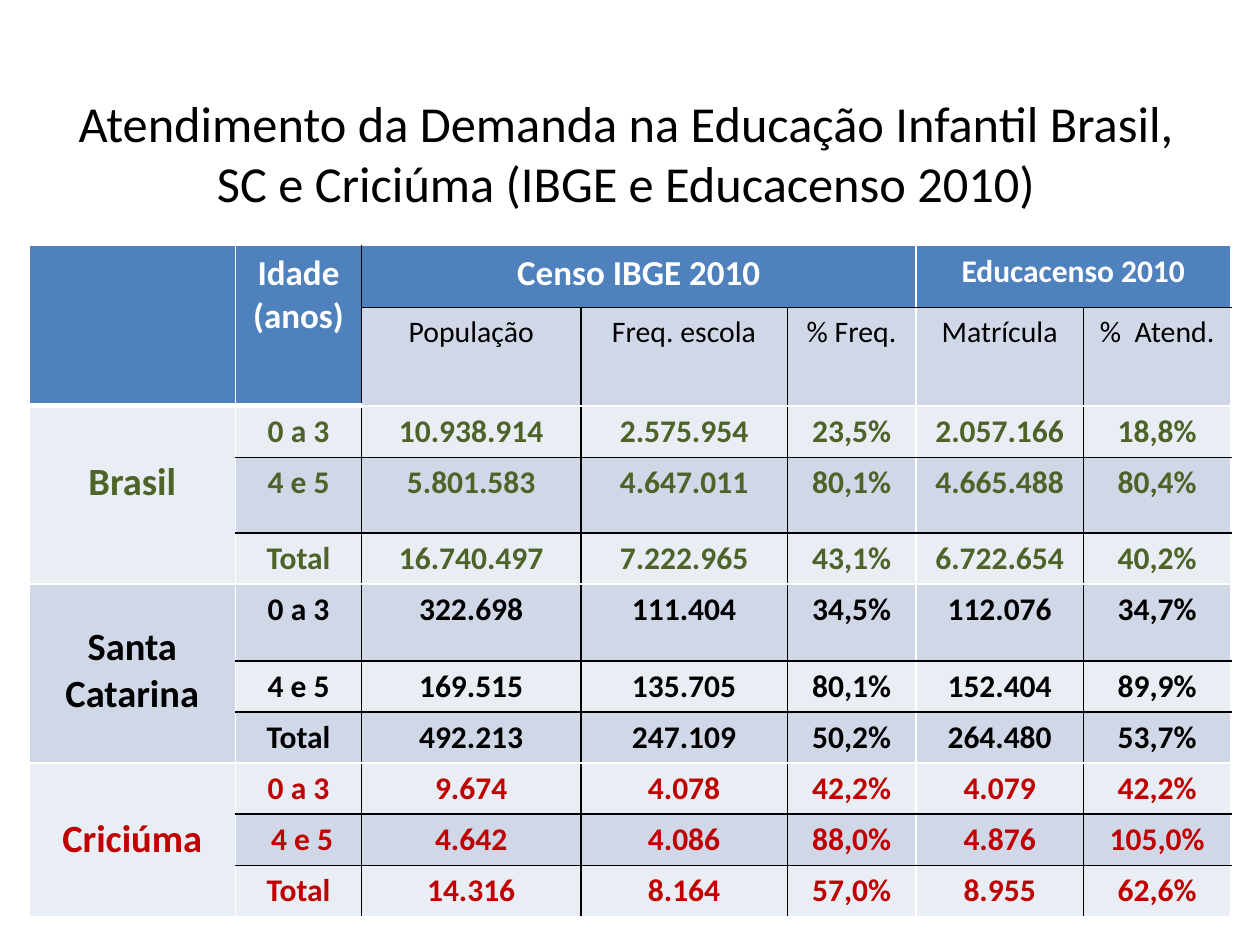
from lxml.etree import SubElement
from pptx import Presentation
from pptx.dml.color import RGBColor
from pptx.enum.text import MSO_ANCHOR, PP_ALIGN
from pptx.oxml.ns import qn
from pptx.util import Inches, Pt

FONT = "Calibri"
BLACK = RGBColor(0x00, 0x00, 0x00)
WHITE = RGBColor(0xFF, 0xFF, 0xFF)
BLUE = RGBColor(0x4F, 0x81, 0xBD)
LIGHT = RGBColor(0xE9, 0xED, 0xF4)
DARK = RGBColor(0xD0, 0xD8, 0xE8)
GREEN = RGBColor(0x4F, 0x62, 0x28)
RED = RGBColor(0xC0, 0x00, 0x00)

# Content
TITLE = "Atendimento da Demanda na Educação Infantil Brasil, SC e Criciúma (IBGE e Educacenso 2010)"
# text, column, rows spanned, columns spanned, size
HEADINGS = [
    ("", 0, 2, 1, 20),
    ("Idade (anos)", 1, 2, 1, 20),
    ("Censo IBGE 2010", 2, 1, 3, 20),
    ("Educacenso 2010", 5, 1, 2, 18),
]
MEASURES = ["População", "Freq. escola", "% Freq.", "Matrícula", "%  Atend."]
# place, text colour, top margin of the place name, rows by age
PLACES = [
    ("Brasil", GREEN, 0.42, [
        ("0 a 3", "10.938.914", "2.575.954", "23,5%", "2.057.166", "18,8%"),
        ("4 e 5", "5.801.583", "4.647.011", "80,1%", "4.665.488", "80,4%"),
        ("Total", "16.740.497", "7.222.965", "43,1%", "6.722.654", "40,2%"),
    ]),
    ("Santa Catarina", BLACK, 0.32, [
        ("0 a 3", "322.698", "111.404", "34,5%", "112.076", "34,7%"),
        ("4 e 5", "169.515", "135.705", "80,1%", "152.404", "89,9%"),
        ("Total", "492.213", "247.109", "50,2%", "264.480", "53,7%"),
    ]),
    ("Criciúma", RED, 0.42, [
        ("0 a 3", "9.674", "4.078", "42,2%", "4.079", "42,2%"),
        (" 4 e 5", "4.642", "4.086", "88,0%", "4.876", "105,0%"),
        ("Total", "14.316", "8.164", "57,0%", "8.955", "62,6%"),
    ]),
]
COLUMN_WIDTHS = [1.64, 1, 1.74, 1.64, 1.02, 1.33, 1.17]
ROW_HEIGHTS = [0.49, 0.78, 0.41, 0.6, 0.4, 0.61, 0.4, 0.4, 0.4, 0.4, 0.4]
HEADER_ROWS = 2
AGES = 3
BLACK_COLUMN_EDGES = {2, 3, 4, 6}


def row_edge_colour(edge):
    """White around each place and the header, black between their rows."""
    if edge < HEADER_ROWS:
        return BLACK if edge == 1 else WHITE
    return BLACK if (edge - HEADER_ROWS) % AGES else WHITE


def column_edge_colour(edge):
    return BLACK if edge in BLACK_COLUMN_EDGES else WHITE


def add_border(cell, side, colour, width):
    line = SubElement(cell._tc.get_or_add_tcPr(), qn(f"a:{side}"), w=str(Pt(width)))
    SubElement(SubElement(line, qn("a:solidFill")), qn("a:srgbClr"), val=str(colour))


def fill_cell(table, row, col, text, size, colour, fill, bold=True, rows=1, cols=1):
    cell = table.cell(row, col)
    if rows > 1 or cols > 1:
        cell.merge(table.cell(row + rows - 1, col + cols - 1))
    bottom_width = 3 if row == 0 and rows == HEADER_ROWS else 1
    add_border(cell, "lnL", column_edge_colour(col), 1)
    add_border(cell, "lnR", column_edge_colour(col + cols), 1)
    add_border(cell, "lnT", row_edge_colour(row), 1)
    add_border(cell, "lnB", row_edge_colour(row + rows), bottom_width)
    cell.fill.solid()
    cell.fill.fore_color.rgb = fill
    if text:
        write(cell.text_frame, text, size, colour, bold)
    return cell


def write(frame, text, size, colour, bold):
    paragraph = frame.paragraphs[0]
    paragraph.alignment = PP_ALIGN.CENTER
    run = paragraph.add_run()
    run.text = text
    run.font.name = FONT
    run.font.size = Pt(size)
    run.font.bold = bold
    run.font.color.rgb = colour


def main():
    prs = Presentation()
    prs.slide_width, prs.slide_height = Inches(10), Inches(7.5)
    slide = prs.slides.add_slide(prs.slide_layouts[5])

    # Title
    title = slide.shapes.title
    title.left, title.top = Inches(0.47), Inches(0.7)
    title.width, title.height = Inches(9), Inches(1.02)
    title.text_frame.vertical_anchor = MSO_ANCHOR.MIDDLE
    write(title.text_frame, TITLE, 28.8, BLACK, False)

    # Table grid
    table = slide.shapes.add_table(
        len(ROW_HEIGHTS), len(COLUMN_WIDTHS), Inches(0.23), Inches(1.95),
        Inches(sum(COLUMN_WIDTHS)), Inches(sum(ROW_HEIGHTS))).table
    for column, width in zip(table.columns, COLUMN_WIDTHS):
        column.width = Inches(width)
    for row, height in zip(table.rows, ROW_HEIGHTS):
        row.height = Inches(height)

    # Header
    for text, col, rows, cols, size in HEADINGS:
        fill_cell(table, 0, col, text, size, WHITE, BLUE, rows=rows, cols=cols)
    for col, measure in enumerate(MEASURES, start=2):
        fill_cell(table, 1, col, measure, 17, BLACK, DARK, bold=False)

    # Places, with rows in alternating bands
    for index, (place, colour, margin, ages) in enumerate(PLACES):
        first = HEADER_ROWS + index * AGES
        name = fill_cell(table, first, 0, place, 22, colour,
                         DARK if first % 2 else LIGHT, rows=AGES)
        name.margin_top = Inches(margin)
        for row, values in enumerate(ages, start=first):
            for col, value in enumerate(values, start=1):
                fill_cell(table, row, col, value, 18, colour, DARK if row % 2 else LIGHT)

    prs.save("out.pptx")


if __name__ == "__main__":
    main()
